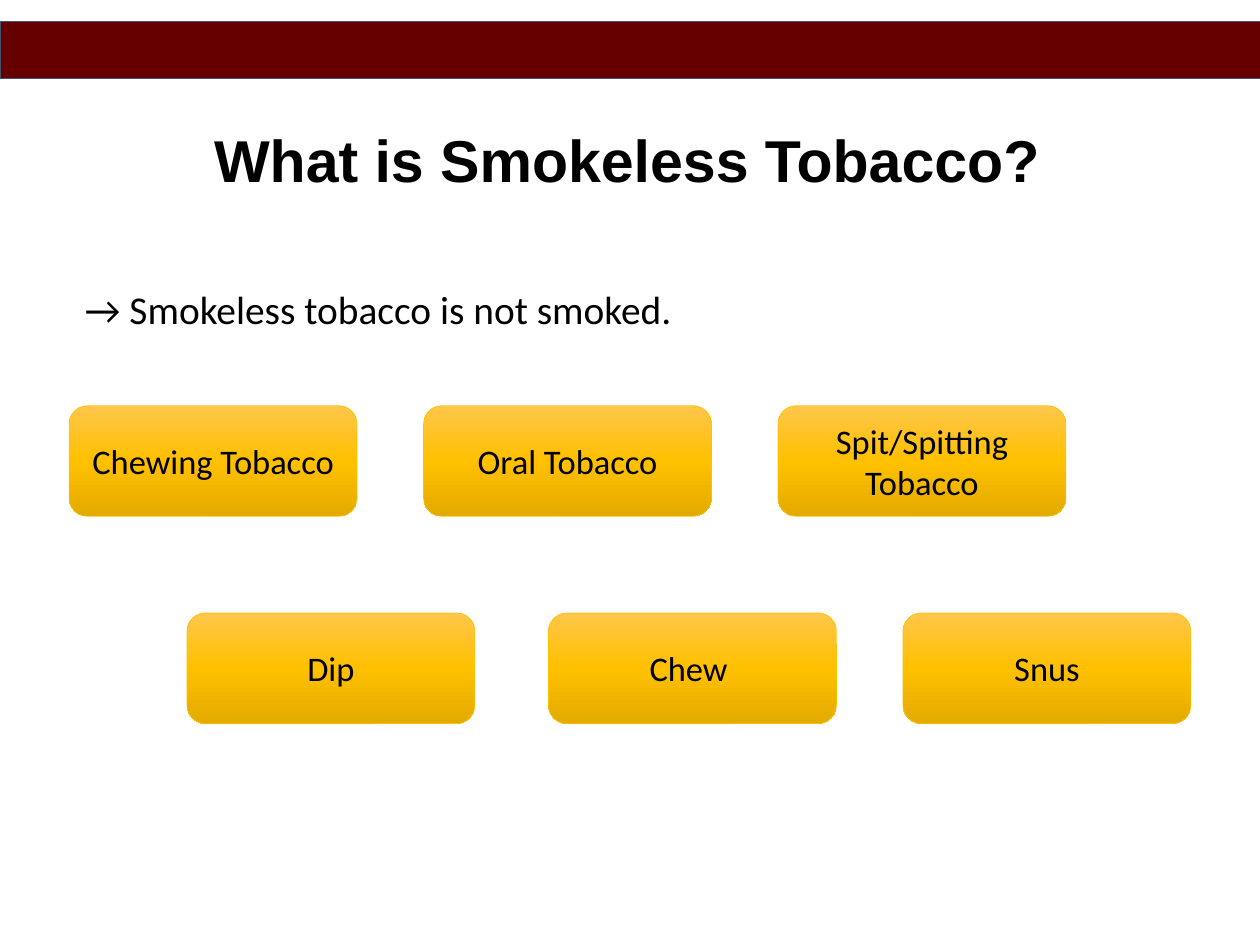
from copy import deepcopy
from dataclasses import dataclass

from pptx import Presentation
from pptx.dml.color import RGBColor as RGB
from pptx.enum.shapes import MSO_SHAPE as SHAPE
from pptx.enum.text import MSO_ANCHOR as ANCHOR, MSO_AUTO_SIZE as AUTO, PP_ALIGN as ALIGN
from pptx.oxml.ns import qn
from pptx.util import Emu, Pt

PX = 9144  # 100 px to the inch
SLIDE_W, SLIDE_H = 1422, 1067
CARD_W, CARD_H = 325, 125
CARD_ROWS = [
    (458, [(78, "Chewing Tobacco"), (478, "Oral Tobacco"), (878, "Spit/Spitting Tobacco")]),
    (692, [(211, "Dip"), (619, "Chew "), (1019, "Snus")]),
]


@dataclass(frozen=True)
class Theme:
    text: str = "000000"
    band: str = "660000"
    band_line: str = "44546A"
    card_line: str = "FFC000"
    card_stops: tuple = ((0, "FFC64B"), (0.5, "FFC000"), (1, "E3AB00"))
    heading_font: str = "Arial"
    body_font: str = "Calibri"
    title_size: int = 48
    body_size: int = 32
    card_size: int = 28


THEME = Theme()


def px(*lengths):
    return [Emu(n * PX) for n in lengths]


def set_text(tf, text, size, font=THEME.body_font, bold=False, align=ALIGN.LEFT):
    tf.text = text
    p = tf.paragraphs[0]
    p.alignment = align
    f = p.runs[0].font
    f.name, f.size, f.bold = font, Pt(size), bold
    f.color.rgb = RGB.from_string(THEME.text)


def add_box(slide, kind, box, line, width):
    """Add an outlined shape without a shadow."""
    s = slide.shapes.add_shape(kind, *px(*box))
    s.shadow.inherit = False
    s.line.color.rgb = RGB.from_string(line)
    s.line.width = Pt(width)
    return s


def fill_gradient(s, stops):
    """Fill top to bottom with three colour stops."""
    s.fill.gradient()
    s.fill.gradient_angle = 270
    gs_list = s._element.spPr.find(qn("a:gradFill")).find(qn("a:gsLst"))
    gs_list.append(deepcopy(gs_list[-1]))
    for stop, (position, color) in zip(s.fill.gradient_stops, stops):
        stop.position = position
        stop.color.rgb = RGB.from_string(color)


def add_band(slide):
    s = add_box(slide, SHAPE.RECTANGLE, (0, 24, SLIDE_W, 65), THEME.band_line, 0.75)
    s.fill.solid()
    s.fill.fore_color.rgb = RGB.from_string(THEME.band)


def add_title(slide, text):
    tf = slide.shapes.add_textbox(*px(228, 133, 978, 92)).text_frame
    tf.word_wrap = False
    tf.auto_size = AUTO.SHAPE_TO_FIT_TEXT
    tf.vertical_anchor = ANCHOR.MIDDLE
    tf.margin_left, tf.margin_top, tf.margin_right, tf.margin_bottom = px(6, 6, 6, 6)
    set_text(tf, text, THEME.title_size, THEME.heading_font, True, ALIGN.CENTER)


def add_statement(slide, text):
    tf = slide.shapes.add_textbox(*px(86, 317, 1208, 64)).text_frame
    tf.word_wrap = True
    tf.auto_size = AUTO.SHAPE_TO_FIT_TEXT
    set_text(tf, text, THEME.body_size)


def add_card(slide, left, top, text):
    s = add_box(slide, SHAPE.ROUNDED_RECTANGLE, (left, top, CARD_W, CARD_H), THEME.card_line, 0.5)
    fill_gradient(s, THEME.card_stops)
    tf = s.text_frame
    tf.word_wrap = True
    tf.vertical_anchor = ANCHOR.MIDDLE
    set_text(tf, text, THEME.card_size, align=ALIGN.CENTER)


def main():
    prs = Presentation()
    prs.slide_width, prs.slide_height = px(SLIDE_W, SLIDE_H)
    slide = prs.slides.add_slide(prs.slide_layouts[6])
    add_title(slide, "What is Smokeless Tobacco? ")
    add_band(slide)
    add_statement(slide, "→ Smokeless tobacco is not smoked.")
    for top, cards in CARD_ROWS:
        for left, text in cards:
            add_card(slide, left, top, text)
    prs.save("out.pptx")


if __name__ == "__main__":
    main()
